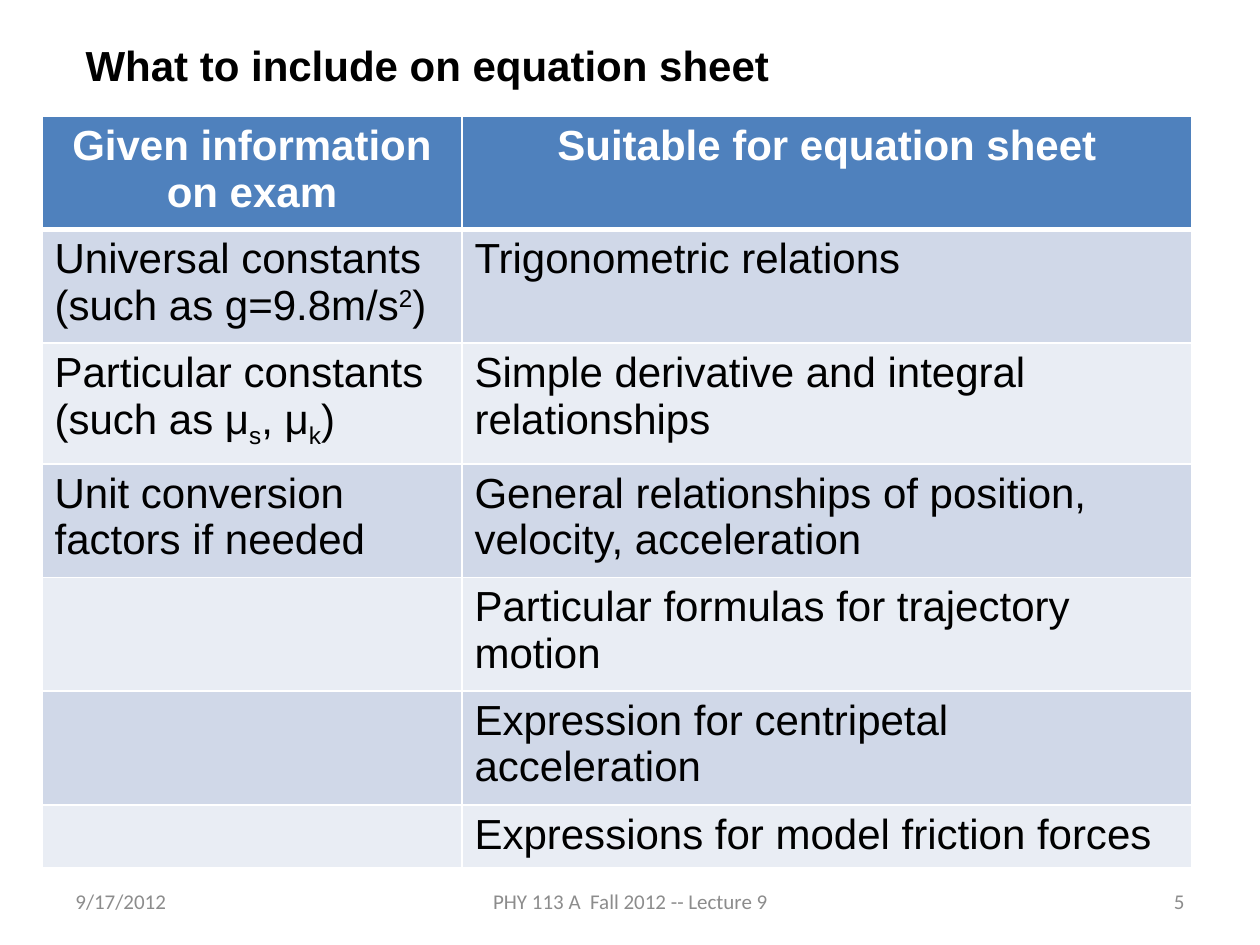
from dataclasses import dataclass

from lxml import etree
from pptx import Presentation
from pptx import util as u
from pptx.dml.color import RGBColor
from pptx.enum import text
from pptx.oxml import ns

EMU_PER_PX = 914400 / 126


@dataclass(frozen=True)
class Theme:
    font: str = "Arial"
    footer_font: str = "Calibri"
    body_size: int = 24
    footer_size: int = 12
    black: str = "000000"
    white: str = "FFFFFF"
    grey: str = "8C8C8C"
    header_fill: str = "4F81BD"
    bands: tuple[str, str] = ("D0D8E8", "E9EDF4")


@dataclass(frozen=True)
class Span:
    text: str
    baseline: int = 0  # percent above (+) or below (-) the line


@dataclass(frozen=True)
class Footer:
    text: str
    left: int
    width: int
    align: text.PP_ALIGN


THEME = Theme()
LEFT, CENTER, RIGHT = text.PP_ALIGN.LEFT, text.PP_ALIGN.CENTER, text.PP_ALIGN.RIGHT

COLUMN_WIDTHS = (420, 730)
ROW_HEIGHTS = (113, 113, 121, 113, 113, 114, 62)
ROWS = (
    ((Span("Given information on exam"),), (Span("Suitable for equation sheet"),)),
    (
        (Span("Universal constants (such as g=9.8m/s"), Span("2", 30), Span(")")),
        (Span("Trigonometric relations"),),
    ),
    (
        (Span("Particular constants (such as μ"), Span("s", -25),
         Span(", μ"), Span("k", -25), Span(")")),
        (Span("Simple derivative and integral relationships"),),
    ),
    (
        (Span("Unit conversion factors if needed"),),
        (Span("General relationships of position, velocity, acceleration"),),
    ),
    ((), (Span("Particular formulas for trajectory motion"),)),
    ((), (Span("Expression for centripetal acceleration"),)),
    ((), (Span("Expressions for model friction forces"),)),
)
FOOTERS = (
    Footer("9/17/2012", 63, 294, LEFT),
    Footer("PHY 113 A  Fall 2012 -- Lecture 9", 431, 399, CENTER),
    Footer("5", 903, 294, RIGHT),
)


def px(value: int) -> u.Emu:
    return u.Emu(round(value * EMU_PER_PX))


def style_paragraph(paragraph, font: str, size: int, color: str,
                    align=LEFT, bold: bool = False) -> None:
    paragraph.alignment = align
    paragraph.font.name = font
    paragraph.font.size = u.Pt(size)
    paragraph.font.bold = bold
    paragraph.font.color.rgb = RGBColor.from_string(color)


def add_title(slide, title: str) -> None:
    shape = slide.shapes.title
    shape.left, shape.top, shape.width, shape.height = map(px, (73, 33, 1071, 63))
    frame = shape.text_frame
    frame.text = title
    frame.vertical_anchor = text.MSO_ANCHOR.TOP
    frame.auto_size = text.MSO_AUTO_SIZE.SHAPE_TO_FIT_TEXT
    style_paragraph(frame.paragraphs[0], THEME.font, THEME.body_size, THEME.black, bold=True)


def add_footer(slide, footer: Footer) -> None:
    shape = slide.shapes.add_textbox(*map(px, (footer.left, 876, footer.width, 50)))
    frame = shape.text_frame
    frame.word_wrap = True
    frame.vertical_anchor = text.MSO_ANCHOR.MIDDLE
    frame.text = footer.text
    style_paragraph(frame.paragraphs[0], THEME.footer_font, THEME.footer_size,
                    THEME.grey, footer.align)


def set_borders(cell, bottom_width: int, top_width: int) -> None:
    """Draw white lines on all four sides; widths are in points."""
    properties = cell._tc.get_or_add_tcPr()
    for side, width in (("L", 1), ("R", 1), ("T", top_width), ("B", bottom_width)):
        line = etree.SubElement(properties, ns.qn(f"a:ln{side}"), w=str(u.Pt(width)))
        fill = etree.SubElement(line, ns.qn("a:solidFill"))
        etree.SubElement(fill, ns.qn("a:srgbClr"), val=THEME.white)


def fill_cell(cell, spans: tuple[Span, ...], row: int) -> None:
    is_header = row == 0
    set_borders(cell, 3 if is_header else 1, 3 if row == 1 else 1)
    cell.fill.solid()
    color = THEME.header_fill if is_header else THEME.bands[(row - 1) % 2]
    cell.fill.fore_color.rgb = RGBColor.from_string(color)
    if not spans:
        return
    paragraph = cell.text_frame.paragraphs[0]
    for span in spans:
        run = paragraph.add_run()
        run.text = span.text
        if span.baseline:
            run.font._element.set("baseline", str(span.baseline * 1000))
    style_paragraph(paragraph, THEME.font, THEME.body_size,
                    THEME.white if is_header else THEME.black,
                    CENTER if is_header else LEFT, is_header)


def add_equation_table(slide) -> None:
    table = slide.shapes.add_table(
        len(ROWS), len(COLUMN_WIDTHS), px(42), px(116),
        px(sum(COLUMN_WIDTHS)), px(sum(ROW_HEIGHTS))).table
    for column, width in zip(table.columns, COLUMN_WIDTHS):
        column.width = px(width)
    for index, (height, contents) in enumerate(zip(ROW_HEIGHTS, ROWS)):
        table.rows[index].height = px(height)
        for cell, spans in zip(table.rows[index].cells, contents):
            fill_cell(cell, spans, index)


def main() -> None:
    presentation = Presentation()
    presentation.slide_width, presentation.slide_height = px(1260), px(945)
    slide = presentation.slides.add_slide(presentation.slide_layouts.get_by_name("Title Only"))
    for footer in FOOTERS:
        add_footer(slide, footer)
    add_title(slide, "What to include on equation sheet")
    add_equation_table(slide)
    presentation.save("out.pptx")


if __name__ == "__main__":
    main()
